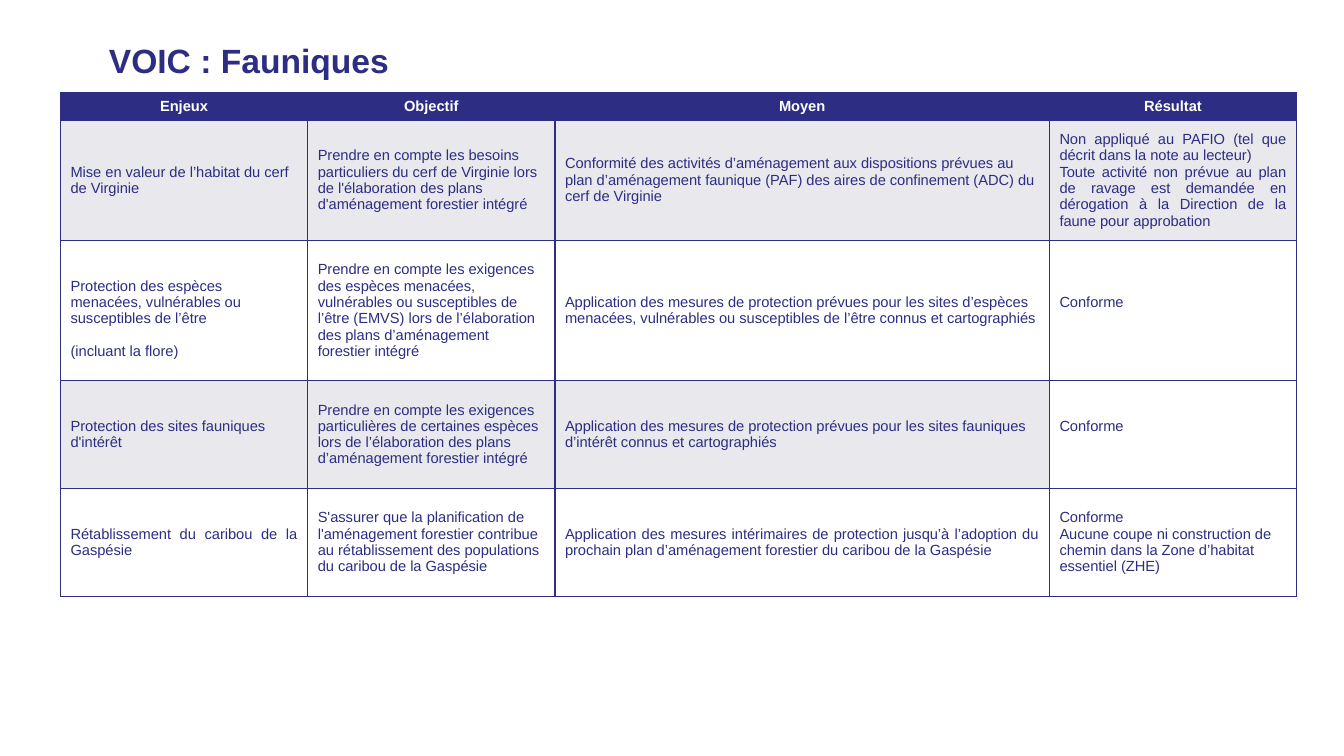
from lxml.etree import SubElement
from pptx import Presentation
from pptx.dml.color import RGBColor
from pptx.enum.text import MSO_ANCHOR, MSO_AUTO_SIZE, PP_ALIGN
from pptx.oxml.ns import qn
from pptx.util import Pt

NAVY, GREY, WHITE = "2D2E83", "E8E8ED", "FFFFFF"
LINE = 11.7
MARGIN = 3.6
COLUMN_WIDTHS = [176.6, 176.6, 353.2, 176.6]
ROW_HEIGHTS = [19.3, 86.1, 100, 77.1, 77.1]

ROWS = [
    ["Enjeux", "Objectif", "Moyen", "Résultat"],
    [
        "Mise en valeur de l’habitat du cerf de Virginie",
        "Prendre en compte les besoins particuliers du cerf de Virginie lors de "
        "l'élaboration des plans d'aménagement forestier intégré",
        "Conformité des activités d’aménagement aux dispositions prévues au plan "
        "d’aménagement faunique (PAF) des aires de confinement (ADC) du cerf de Virginie",
        "Non appliqué au PAFIO (tel que décrit dans la note au lecteur)\n"
        "Toute activité non prévue au plan de ravage est demandée en dérogation "
        "à la Direction de la faune pour approbation",
    ],
    [
        "Protection des espèces menacées, vulnérables ou susceptibles de l’être\n"
        "(incluant la flore)",
        "Prendre en compte les exigences des espèces menacées, vulnérables ou "
        "susceptibles de l’être (EMVS) lors de l’élaboration des plans "
        "d’aménagement forestier intégré",
        "Application des mesures de protection prévues pour les sites d’espèces "
        "menacées, vulnérables ou susceptibles de l’être connus et cartographiés",
        "Conforme",
    ],
    [
        "Protection des sites fauniques d'intérêt",
        "Prendre en compte les exigences particulières de certaines espèces lors "
        "de l’élaboration des plans d’aménagement forestier intégré",
        "Application des mesures de protection prévues pour les sites fauniques "
        "d’intérêt connus et cartographiés",
        "Conforme",
    ],
    [
        "Rétablissement du caribou de la Gaspésie",
        "S'assurer que la planification de l'aménagement forestier contribue au "
        "rétablissement des populations du caribou de la Gaspésie",
        "Application des mesures intérimaires de protection jusqu’à l’adoption du "
        "prochain plan d’aménagement forestier du caribou de la Gaspésie",
        "Conforme\n"
        "Aucune coupe ni construction de chemin dans la Zone d’habitat essentiel (ZHE)",
    ],
]
JUSTIFIED = {(1, 3), (4, 0), (4, 2)}
UNFILLED = {(3, 3), (4, 3)}
LOWERED = (2, 0)
RAISED = {(2, 3), (3, 3)}


def color(hex_string):
    return RGBColor.from_string(hex_string)


def set_font(paragraph, size, hex_string, bold):
    font = paragraph.font
    font.name, font.size, font.bold = "Arial", Pt(size), bold
    font.color.rgb = color(hex_string)


def add_title(slide, text):
    title = slide.shapes.title
    title.left, title.top, title.width, title.height = Pt(70.6), Pt(28), Pt(828), Pt(43.2)
    frame = title.text_frame
    frame.text = text
    frame.auto_size = MSO_AUTO_SIZE.NONE
    frame.vertical_anchor = MSO_ANCHOR.TOP
    paragraph = frame.paragraphs[0]
    paragraph.alignment = PP_ALIGN.LEFT
    paragraph.line_spacing = 0.9
    set_font(paragraph, 24, NAVY, True)


def add_borders(cell):
    properties = cell._tc.get_or_add_tcPr()
    for side in ("a:lnL", "a:lnR", "a:lnT", "a:lnB"):
        line = SubElement(properties, qn(side), w=str(Pt(1)))
        fill = SubElement(line, qn("a:solidFill"))
        SubElement(fill, qn("a:srgbClr"), val=NAVY)


def fill_cell(cell, position):
    row = position[0]
    if position in UNFILLED:
        cell.fill.background()
        return
    cell.fill.solid()
    cell.fill.fore_color.rgb = color(NAVY if row == 0 else GREY if row % 2 else WHITE)


def format_cell(cell, position, text):
    header = position[0] == 0
    add_borders(cell)
    fill_cell(cell, position)
    cell.vertical_anchor = MSO_ANCHOR.MIDDLE
    cell.margin_top = Pt(MARGIN + LINE if position == LOWERED else MARGIN)
    cell.margin_bottom = Pt(MARGIN + LINE if position in RAISED else MARGIN)
    cell.text = text
    for index, paragraph in enumerate(cell.text_frame.paragraphs):
        if header:
            paragraph.alignment = PP_ALIGN.CENTER
        elif position in JUSTIFIED:
            paragraph.alignment = PP_ALIGN.JUSTIFY
        else:
            paragraph.alignment = PP_ALIGN.LEFT
        if position == LOWERED and index:
            paragraph.space_before = Pt(LINE)
        set_font(paragraph, 10.5, WHITE if header else NAVY, header)


def add_issue_table(slide):
    table = slide.shapes.add_table(
        len(ROWS), len(COLUMN_WIDTHS), Pt(43.2), Pt(66.4),
        Pt(sum(COLUMN_WIDTHS)), Pt(sum(ROW_HEIGHTS)),
    ).table
    for column, width in zip(table.columns, COLUMN_WIDTHS):
        column.width = Pt(width)
    for row, height in zip(table.rows, ROW_HEIGHTS):
        row.height = Pt(height)
    for row_index, texts in enumerate(ROWS):
        for column_index, text in enumerate(texts):
            position = (row_index, column_index)
            format_cell(table.cell(*position), position, text)


def main():
    presentation = Presentation()
    presentation.slide_width, presentation.slide_height = Pt(960), Pt(540)
    slide = presentation.slides.add_slide(presentation.slide_layouts[5])
    add_title(slide, "VOIC : Fauniques")
    add_issue_table(slide)
    presentation.save("out.pptx")


if __name__ == "__main__":
    main()
